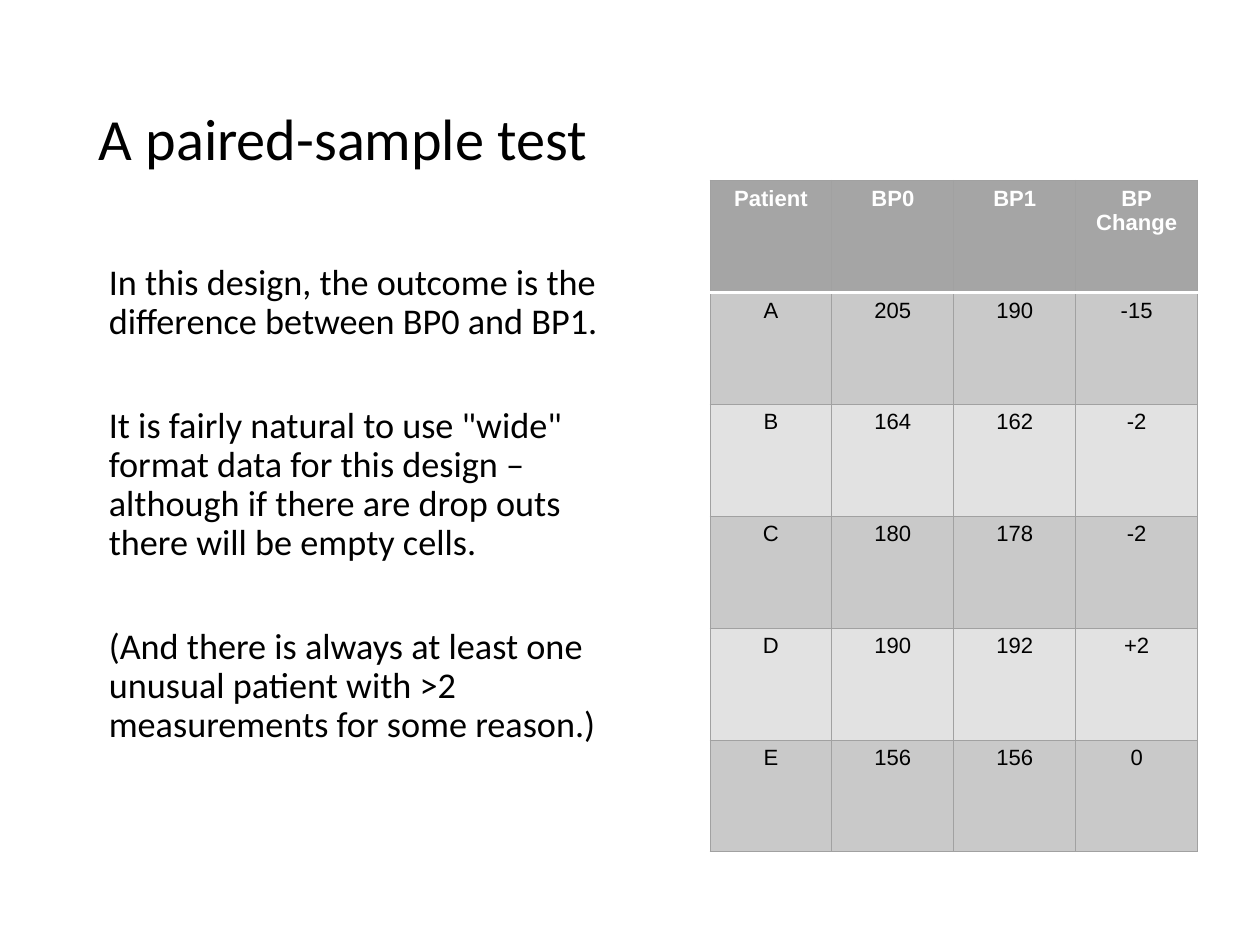
"""Build the slide on the paired-sample test, with its table of blood pressures."""
import pptx
import pptx.dml.color
import pptx.enum.text
import pptx.oxml
import pptx.oxml.ns
import pptx.util

BLACK = pptx.dml.color.RGBColor(0x00, 0x00, 0x00)
WHITE = pptx.dml.color.RGBColor(0xFF, 0xFF, 0xFF)
HEADER_GREY = pptx.dml.color.RGBColor(0xA5, 0xA5, 0xA5)
DARK_BAND = pptx.dml.color.RGBColor(0xC9, 0xC9, 0xC9)
LIGHT_BAND = pptx.dml.color.RGBColor(0xE2, 0xE2, 0xE2)
BORDER_GREY = pptx.dml.color.RGBColor(0xA1, 0xA1, 0xA1)
LEFT = pptx.enum.text.PP_ALIGN.LEFT
CENTER = pptx.enum.text.PP_ALIGN.CENTER


def write(frame, text, size, font="Calibri", color=BLACK, bold=False,
          align=LEFT, line_spacing=0.9, gap=0):
    """Write each line of the text as a paragraph, with a gap between them."""
    for number, line in enumerate(text.split("\n")):
        para = frame.add_paragraph() if number else frame.paragraphs[0]
        para.alignment = align
        para.line_spacing = line_spacing
        para.space_before = pptx.util.Pt(gap if number else 0)
        span = para.add_run()
        span.text = line
        span.font.size = pptx.util.Pt(size)
        span.font.name = font
        span.font.bold = bold
        span.font.color.rgb = color


def draw_border(cell, side, position, color, points):
    """Add one border line to a cell, ahead of its fill."""
    line = pptx.oxml.parse_xml(
        f'<a:{side} {pptx.oxml.ns.nsdecls("a")} w="{pptx.util.Pt(points)}">'
        f'<a:solidFill><a:srgbClr val="{color}"/></a:solidFill></a:{side}>')
    cell._tc.get_or_add_tcPr().insert(position, line)


deck = pptx.Presentation()
deck.slide_width = pptx.util.Inches(11.11)
deck.slide_height = pptx.util.Inches(8.33)
page = deck.slides.add_slide(deck.slide_layouts[6])
across = deck.slide_width / 100
down = deck.slide_height / 100

title = "A paired-sample test"
body = (
    "In this design, the outcome is the difference between BP0 and BP1.\n"
    "It is fairly natural to use \"wide\" format data for this design –although "
    "if there are drop outs there will be empty cells.\n"
    "(And there is always at least one unusual patient with >2 measurements "
    "for some reason.)")
middle = pptx.enum.text.MSO_ANCHOR.MIDDLE
top = pptx.enum.text.MSO_ANCHOR.TOP

for text, row, columns, rows, size, anchor, indent, gap in (
        (title, 5.28, 86.23, 19.33, 37, middle, 0, 0),
        (body, 26.65, 41.76, 63.5, 23, top, 0.8, 41)):
    box = page.shapes.add_textbox(int(6.84 * across), int(row * down),
                                  int(columns * across), int(rows * down))
    frame = box.text_frame
    frame.word_wrap = True
    frame.vertical_anchor = anchor
    frame.margin_left = int((1 + indent) * across)
    frame.margin_right = frame.margin_top = frame.margin_bottom = int(across)
    write(frame, text, size, gap=gap)

readings = (
    ("Patient", "BP0", "BP1", "BP\nChange"),
    ("A", "205", "190", "-15"),
    ("B", "164", "162", "-2"),
    ("C", "180", "178", "-2"),
    ("D", "190", "192", "+2"),
    ("E", "156", "156", "0"),
)
table = page.shapes.add_table(
    len(readings), len(readings[0]), int(56.35 * across), int(19.09 * down),
    int(38.7 * across), int(71.07 * down)).table

for row, reading in enumerate(readings):
    header = row == 0
    band = HEADER_GREY if header else DARK_BAND if row % 2 else LIGHT_BAND
    for column, text in enumerate(reading):
        cell = table.cell(row, column)
        cell.fill.solid()
        cell.fill.fore_color.rgb = band
        write(cell.text_frame, text, 14, font="Arial", bold=header, align=CENTER,
              color=WHITE if header else BLACK, line_spacing=1.0)
        for position, side in enumerate(("lnL", "lnR", "lnT", "lnB")):
            under_header = (row, side) in ((0, "lnB"), (1, "lnT"))
            draw_border(cell, side, position,
                        WHITE if under_header else BORDER_GREY,
                        2 if under_header else 0.75)

deck.save("out.pptx")
